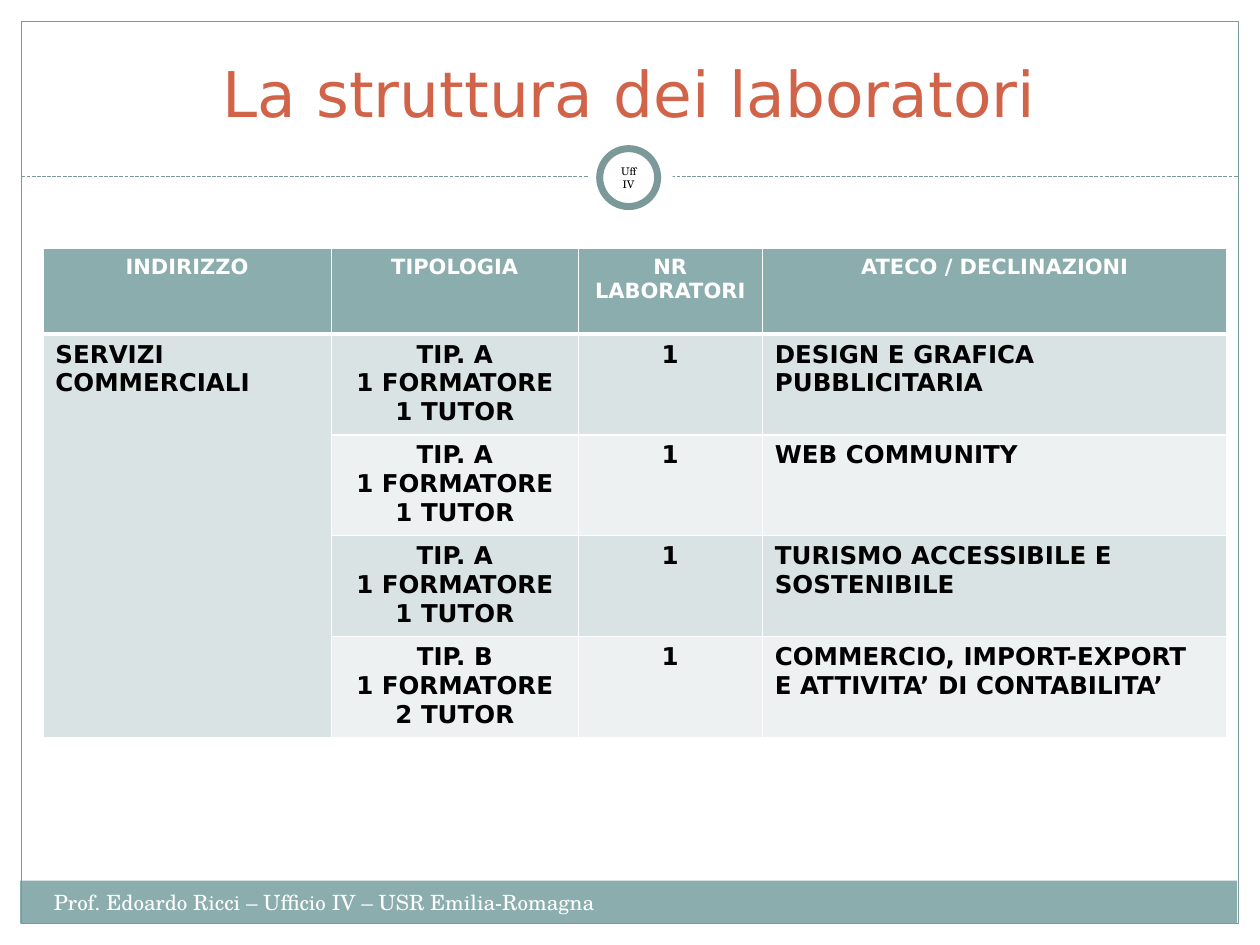
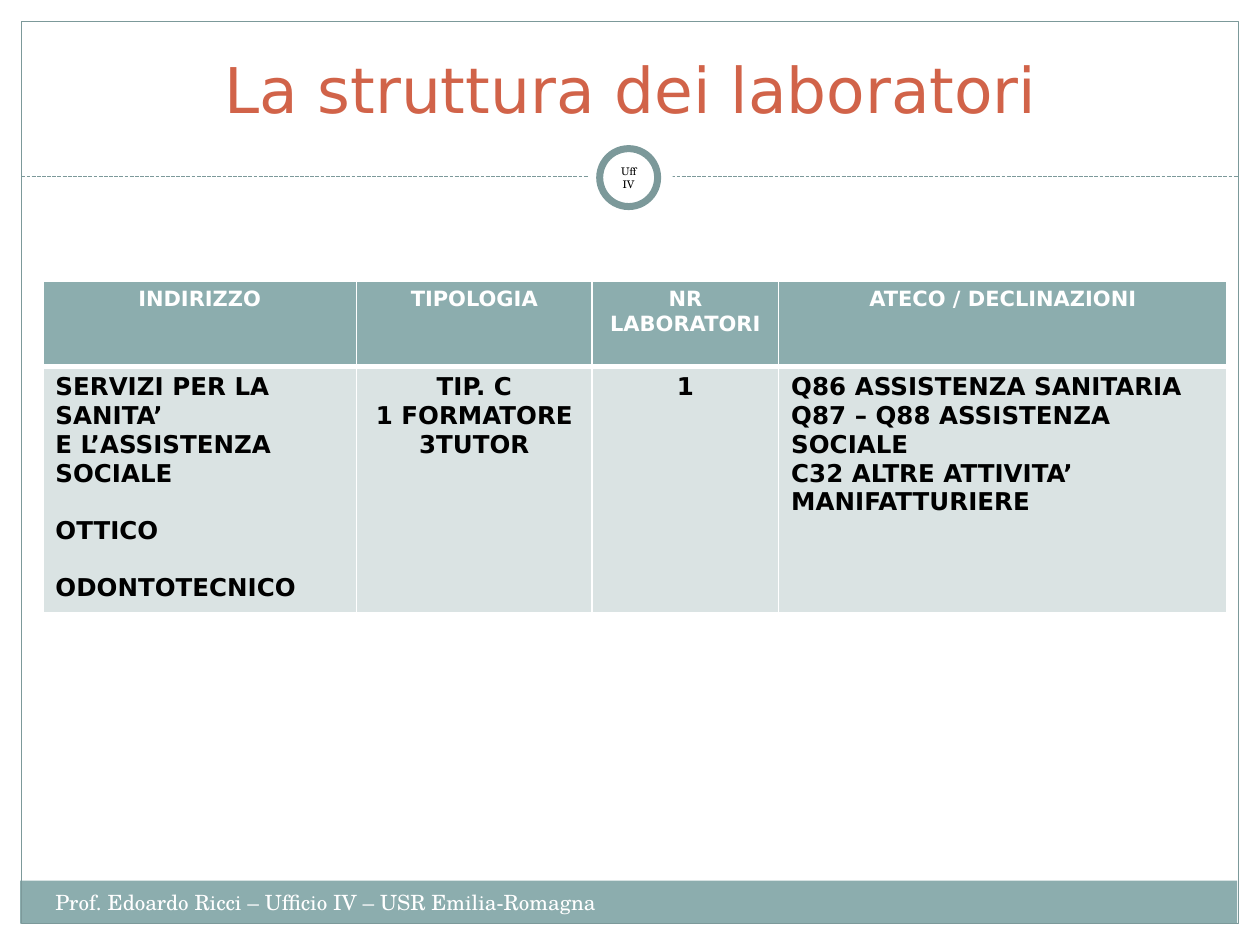
from lxml import etree
from pptx import Presentation
from pptx.dml.color import RGBColor
from pptx.enum.dml import MSO_LINE
from pptx.enum.shapes import MSO_CONNECTOR, MSO_SHAPE
from pptx.enum.text import MSO_ANCHOR, MSO_AUTO_SIZE, PP_ALIGN
from pptx.oxml.ns import qn
from pptx.util import Inches, Pt

RECT, OVAL = MSO_SHAPE.RECTANGLE, MSO_SHAPE.OVAL
STRAIGHT, DASH = MSO_CONNECTOR.STRAIGHT, MSO_LINE.SQUARE_DOT
LEFT, CENTER = PP_ALIGN.LEFT, PP_ALIGN.CENTER
MIDDLE, BOTTOM = MSO_ANCHOR.MIDDLE, MSO_ANCHOR.BOTTOM
FIXED = MSO_AUTO_SIZE.NONE

WHITE, BLACK, TEAL, EDGE, RUST = "FFFFFF", "000000", "8CADAE", "7C999A", "D16349"
BANDS = ["EEF1F2", "DAE3E3"]
SANS, SERIF = "DejaVu Sans", "TeX Gyre Schola"

HEAD = ["INDIRIZZO", "TIPOLOGIA", "NR\nLABORATORI", "ATECO / DECLINAZIONI"]
ALIGNS = [LEFT, CENTER, CENTER, LEFT]
TIP_A = "TIP. A\n1 FORMATORE\n1 TUTOR"


def rgb(code):
    return RGBColor.from_string(code)


class Deck:
    title_font = dict(name=SANS, size=Pt(36), color=RUST)
    foot_font = dict(name=SERIF, size=Pt(12), color=WHITE)
    ring_font = dict(name=SERIF, size=Pt(6), color=BLACK)
    head_font = dict(name=SANS, size=Pt(12), bold=True, color=WHITE)
    cell_font = dict(name=SANS, size=Pt(14), bold=True, color=BLACK)

    def __init__(self):
        self.prs = Presentation()
        self.prs.slide_width, self.prs.slide_height = Inches(10), Inches(7.5)
        self.slide = None

    def put_text(self, frame, text, font, align=LEFT):
        """Fill a frame line by line; a blank line becomes space before."""
        frame.word_wrap = True
        first = True
        for block in text.split("\n\n"):
            for i, line in enumerate(block.split("\n")):
                para = frame.paragraphs[0] if first else frame.add_paragraph()
                para.text, para.alignment = line, align
                if i == 0 and not first:
                    para.space_before = Pt(font["size"].pt * 1.16)
                first = False
                for key, value in font.items():
                    if key == "color":
                        para.font.color.rgb = rgb(value)
                    else:
                        setattr(para.font, key, value)

    def shape(self, kind, box, fill=None, line=None, width=0.75):
        item = self.slide.shapes.add_shape(kind, *map(Inches, box))
        item.shadow.inherit = False
        if fill:
            item.fill.solid()
            item.fill.fore_color.rgb = rgb(fill)
        else:
            item.fill.background()
        if line:
            item.line.color.rgb, item.line.width = rgb(line), Pt(width)
        else:
            item.line.fill.background()
        return item

    def rule(self, y):
        line = self.slide.shapes.add_connector(
            STRAIGHT, Inches(0.17), Inches(y), Inches(9.83), Inches(y))
        line.line.color.rgb, line.line.width = rgb(EDGE), Pt(0.75)
        line.line.dash_style = DASH
        etree.SubElement(line.element.spPr, qn("a:effectLst"))

    def ring(self):
        self.shape(OVAL, (4.67, 1.05, 0.67, 0.67), WHITE)
        ring = self.shape(OVAL, (4.76, 1.18, 0.46, 0.46), WHITE, EDGE, 4)
        frame = ring.text_frame
        frame.vertical_anchor = MIDDLE
        frame.margin_left = frame.margin_right = Inches(0.05)
        frame.margin_top = frame.margin_bottom = 0
        self.put_text(frame, "Uff IV", self.ring_font, CENTER)

    def title(self, left, top):
        item = self.slide.shapes.title
        item.left, item.top = Inches(left), Inches(top)
        item.width, item.height = Inches(9.33), Inches(0.83)
        frame = item.text_frame
        frame.auto_size, frame.vertical_anchor = FIXED, BOTTOM
        self.put_text(frame, "La struttura dei laboratori", self.title_font, CENTER)

    def footer(self, left):
        box = self.slide.shapes.add_textbox(
            Inches(left), Inches(7.01), Inches(5.18), Inches(0.3))
        self.put_text(box.text_frame,
                      "Prof. Edoardo Ricci – Ufficio IV – USR Emilia-Romagna",
                      self.foot_font)

    def page(self, left, top):
        """Start a slide with the shared frame, title and footer."""
        self.slide = self.prs.slides.add_slide(self.prs.slide_layouts[5])
        self.shape(RECT, (0.16, 6.99, 9.66, 0.34), TEAL)
        self.shape(RECT, (0.17, 0.17, 9.66, 7.16), line=EDGE)
        self.rule(1.4)
        self.ring()
        self.title(left, top)
        self.footer(left)

    def edges(self, cell, base):
        props = cell._tc.get_or_add_tcPr()
        for i, side in enumerate("LRTB"):
            width = Pt(base if side == "B" else 1)
            line = etree.Element(qn(f"a:ln{side}"), w=str(width))
            fill = etree.SubElement(line, qn("a:solidFill"))
            etree.SubElement(fill, qn("a:srgbClr"), val=WHITE)
            props.insert(i, line)

    def table(self, top, cols, high, rows):
        """Draw the header and rows; the first column is one merged cell."""
        heights = [0.68] + [high] * len(rows)
        grid = self.slide.shapes.add_table(
            len(heights), len(cols), Inches(0.34), Inches(top),
            Inches(sum(cols)), Inches(sum(heights))).table
        for col, width in zip(grid.columns, cols):
            col.width = Inches(width)
        for row, height in zip(grid.rows, heights):
            row.height = Inches(height)
        for r, texts in enumerate([HEAD] + rows):
            for c, text in enumerate(texts):
                cell = grid.cell(r, c)
                cell.fill.solid()
                cell.fill.fore_color.rgb = rgb(BANDS[r % 2] if r else TEAL)
                self.edges(cell, 1 if r else 3)
                if text:
                    font = self.cell_font if r else self.head_font
                    self.put_text(cell.text_frame, text, font,
                                  ALIGNS[c] if r else CENTER)
        if len(rows) > 1:
            grid.cell(1, 0).merge(grid.cell(len(rows), 0))


def main():
    deck = Deck()

    deck.page(0.33, 0.25)
    deck.table(1.97, [2.29, 1.96, 1.46, 3.69], 0.79, [
        ["SERVIZI COMMERCIALI", TIP_A, "1", "DESIGN E GRAFICA PUBBLICITARIA"],
        ["", TIP_A, "1", "WEB COMMUNITY"],
        ["", TIP_A, "1", "TURISMO ACCESSIBILE E SOSTENIBILE"],
        ["", "TIP. B\n1 FORMATORE\n2 TUTOR", "1",
         "COMMERCIO, IMPORT-EXPORT\nE ATTIVITA’ DI CONTABILITA’"],
    ])

    deck.page(0.34, 0.22)
    deck.table(2.23, [2.49, 1.87, 1.48, 3.56], 1.92, [
        ["SERVIZI PER LA SANITA’\nE L’ASSISTENZA SOCIALE\n\nOTTICO\n\nODONTOTECNICO",
         "TIP. C\n1 FORMATORE\n3TUTOR", "1",
         "Q86 ASSISTENZA SANITARIA\nQ87 – Q88 ASSISTENZA SOCIALE\n"
         "C32 ALTRE ATTIVITA’ MANIFATTURIERE"],
    ])

    deck.prs.save("out.pptx")


if __name__ == "__main__":
    main()
